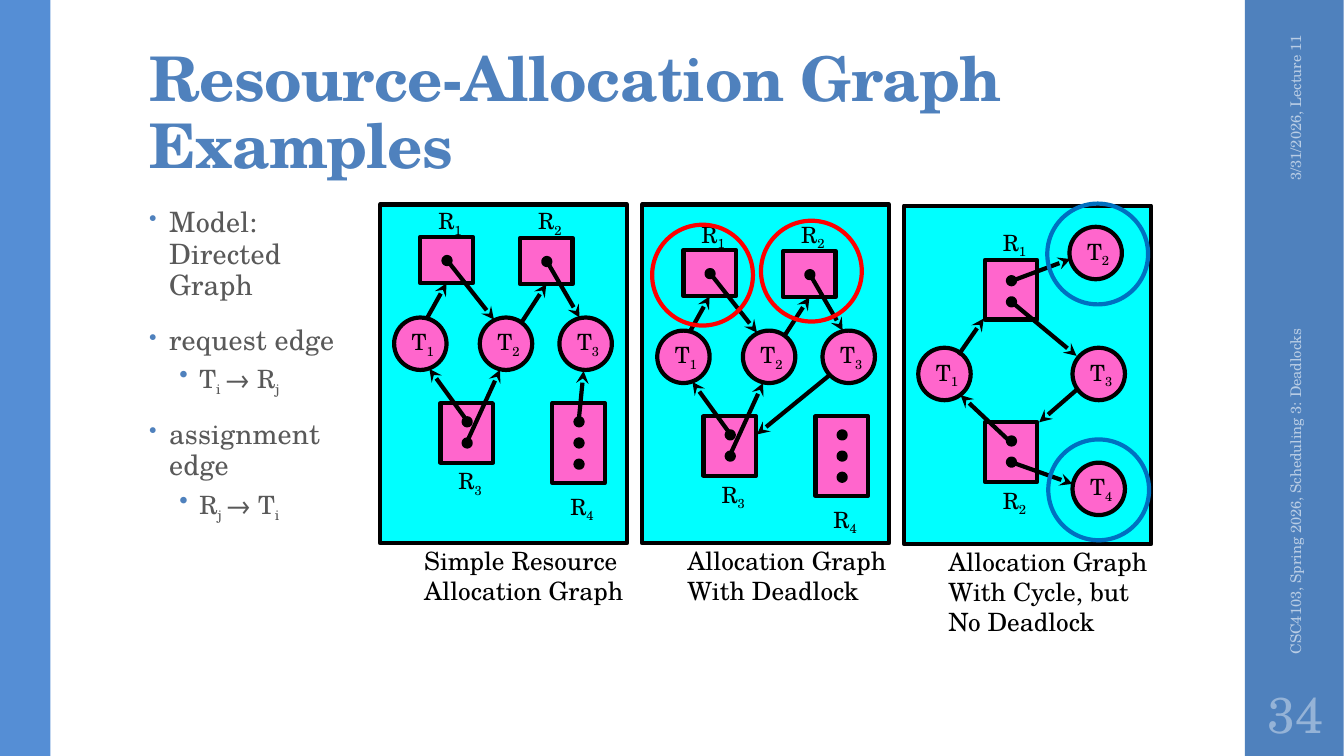
from dataclasses import dataclass
from typing import Any, Optional

from lxml.etree import SubElement
from pptx import Presentation
from pptx.dml.color import RGBColor
from pptx.enum.shapes import MSO_CONNECTOR, MSO_SHAPE
from pptx.enum.text import MSO_ANCHOR, MSO_AUTO_SIZE, PP_ALIGN
from pptx.oxml.ns import qn
from pptx.util import Emu, Pt

PX = 9144  # one px is a hundredth of an inch
FONT = "TeX Gyre Schola"
COLORS = {
    "blue": "4F81BD", "strip": "558ED5", "gray": "595959", "pale": "B9CDE5",
    "number": "95B3D7", "cyan": "00FFFF", "pink": "FF66CC", "black": "000000",
    "red": "FF0000", "ring": "0070C0",
}
Box = tuple[int, int, int, int]
Point = tuple[int, int]


@dataclass(frozen=True)
class Resource:
    number: int
    at: Point
    height: int
    dots: int
    dot_top: int
    label_top: int


@dataclass(frozen=True)
class Edge:
    begin: Point
    end: Point
    joined: Optional[int] = None  # resource whose bottom middle it meets


@dataclass(frozen=True)
class Panel:
    frame: Point
    graph: Point
    threads: tuple[Point, ...]
    resources: tuple[Resource, ...]
    edges: tuple[Edge, ...]
    caption: str
    caption_box: Box


@dataclass(frozen=True)
class Label:
    box: Box
    text: str
    size: float
    color: str
    align: PP_ALIGN = PP_ALIGN.LEFT
    rotation: int = 0
    margin: int = 10


@dataclass(frozen=True)
class Bullet:
    spans: tuple[str, ...]  # every second span is a subscript
    level: int = 0


THREADS = ((14, 112), (99, 112), (178, 112))
RESOURCES = (
    Resource(1, (40, 32), 46, 1, 20, -34), Resource(2, (139, 33), 46, 1, 20, -35),
    Resource(3, (60, 197), 59, 2, 15, 59), Resource(4, (171, 197), 79, 3, 15, 84),
)
EDGES = (
    Edge((47, 112), (67, 79), 1), Edge((68, 57), (113, 114)),
    Edge((141, 116), (162, 81), 2), Edge((166, 57), (198, 112)),
    Edge((86, 214), (49, 163)), Edge((86, 236), (119, 164)),
)
PANELS = (
    Panel((377, 203), (377, 203), THREADS, RESOURCES,
          EDGES + (Edge((197, 216), (202, 165)),),
          "Simple Resource\nAllocation Graph", (411, 536, 220, 71)),
    Panel((637, 203), (638, 216), THREADS, RESOURCES,
          EDGES + (Edge((184, 157), (113, 215)),),
          "Allocation Graph\vWith Deadlock", (672, 536, 220, 71)),
    Panel((897, 204), (897, 204),
          ((14, 141), (164, 21), (167, 141), (167, 255)),
          (Resource(2, (80, 215), 59, 2, 15, 59), Resource(1, (80, 54), 59, 2, 17, -36)),
          (Edge((54, 148), (79, 112)), Edge((105, 234), (56, 188)),
           Edge((105, 254), (167, 276)), Edge((172, 182), (134, 215)),
           Edge((106, 95), (171, 149)), Edge((106, 75), (165, 53))),
          "Allocation Graph\vWith Cycle, but\nNo Deadlock", (931, 537, 220, 101)),
)
RINGS = ((755, 219, "red"), (647, 223, "red"), (1039, 202, "ring"), (1040, 436, "ring"))
MARGIN_LABELS = (
    Label((1181, 109, 208, 40), "3/31/2026, Lecture 11", 10.5, "pale", PP_ALIGN.RIGHT, 270),
    Label((1089, 443, 392, 40), "CSC4103, Spring 2026, Scheduling 3: Deadlocks",
          10.5, "pale", rotation=270),
    Label((1235, 675, 100, 65), "34", 36, "number", PP_ALIGN.CENTER, margin=5),
)
BULLETS = (
    Bullet(("Model: Directed Graph",)),
    Bullet(("request edge",)), Bullet(("T", "i ", "→ R", "j"), 1),
    Bullet(("assignment edge",)), Bullet(("R", "j ", "→ T", "i"), 1),
)


def rgb(name: str) -> RGBColor:
    return RGBColor.from_string(COLORS[name])


def emu(*lengths: int) -> list[Emu]:
    return [Emu(length * PX) for length in lengths]


def set_font(para: Any, size: float, color: str) -> None:
    para.font.name, para.font.size = FONT, Pt(size)
    para.font.color.rgb = rgb(color)


def add_spans(para: Any, spans: tuple[str, ...]) -> None:
    for index, text in enumerate(spans):
        span = para.add_run()
        span.text = text
        if index % 2:
            span.font._element.set("baseline", "-25000")


def add_preset(shapes: Any, kind: MSO_SHAPE, box: Box, fill: Optional[str],
               line: Optional[str] = "black") -> Any:
    shape = shapes.add_shape(kind, *emu(*box))
    shape.shadow.inherit = False
    if fill:
        shape.fill.solid()
        shape.fill.fore_color.rgb = rgb(fill)
    else:
        shape.fill.background()
    if line:
        shape.line.color.rgb, shape.line.width = rgb(line), Pt(3)
    else:
        shape.line.fill.background()
    return shape


def write_node(shape: Any, letter: str, number: int) -> None:
    frame = shape.text_frame
    frame.word_wrap = False
    para = frame.paragraphs[0]
    para.alignment = PP_ALIGN.LEFT
    add_spans(para, (letter, str(number)))
    set_font(para, 16, "black")


def add_resource(shapes: Any, resource: Resource, origin: Point) -> Any:
    left, top = origin[0] + resource.at[0], origin[1] + resource.at[1]
    square = add_preset(shapes, MSO_SHAPE.RECTANGLE, (left, top, 52, resource.height), "pink")
    for row in range(resource.dots):
        dot_top = top + resource.dot_top + 21 * row
        add_preset(shapes, MSO_SHAPE.OVAL, (left + 23, dot_top, 7, 7), "black")
    label = shapes.add_textbox(*emu(left + 8, top + resource.label_top, 45, 37))
    write_node(label, "R", resource.number)
    return square


def add_edge(shapes: Any, edge: Edge, origin: Point, squares: dict[int, Any]) -> None:
    x, y = origin
    arrow = shapes.add_connector(MSO_CONNECTOR.STRAIGHT, *emu(
        x + edge.begin[0], y + edge.begin[1], x + edge.end[0], y + edge.end[1]))
    arrow.line.color.rgb, arrow.line.width = rgb("black"), Pt(3)
    properties = arrow._element.spPr
    SubElement(properties.find(qn("a:ln")), qn("a:tailEnd"), type="stealth")
    SubElement(properties, qn("a:effectLst"))
    if edge.joined:
        arrow.end_connect(squares[edge.joined], 2)


def add_panel(page: Any, panel: Panel) -> None:
    shapes = page.shapes.add_group_shape().shapes
    add_preset(shapes, MSO_SHAPE.RECTANGLE, (*panel.frame, 245, 336), "cyan")
    x, y = panel.graph
    for number, (left, top) in enumerate(panel.threads, 1):
        circle = add_preset(shapes, MSO_SHAPE.OVAL, (x + left, y + top, 52, 52), "pink")
        circle.text_frame.vertical_anchor = MSO_ANCHOR.MIDDLE
        write_node(circle, "T", number)
    squares = {item.number: add_resource(shapes, item, panel.graph) for item in panel.resources}
    for edge in panel.edges:
        add_edge(shapes, edge, panel.graph, squares)
    frame = page.shapes.add_textbox(*emu(*panel.caption_box)).text_frame
    frame.word_wrap = False
    frame.text = panel.caption
    for para in frame.paragraphs:
        set_font(para, 18, "black")


def add_label(page: Any, label: Label) -> None:
    box = page.shapes.add_textbox(*emu(*label.box))
    box.rotation = label.rotation
    frame = box.text_frame
    frame.word_wrap, frame.vertical_anchor = True, MSO_ANCHOR.MIDDLE
    frame.margin_left, frame.margin_right = emu(label.margin, label.margin)
    frame.text = label.text
    frame.paragraphs[0].alignment = label.align
    set_font(frame.paragraphs[0], label.size, label.color)


def add_title(page: Any) -> None:
    title = page.shapes.title
    title.left, title.top, title.width, title.height = emu(138, 32, 1060, 153)
    frame = title.text_frame
    frame.text = "Resource-Allocation Graph Examples"
    frame.word_wrap, frame.auto_size = True, MSO_AUTO_SIZE.NONE
    frame.vertical_anchor = MSO_ANCHOR.BOTTOM
    frame.margin_left, frame.margin_top, frame.margin_right, frame.margin_bottom = emu(10, 3, 10, 5)
    para = frame.paragraphs[0]
    para.alignment, para.line_spacing = PP_ALIGN.LEFT, 0.9
    set_font(para, 44, "blue")
    para.font.bold = True
    para.runs[0].font._element.set("spc", "-50")


def add_bullets(page: Any) -> None:
    frame = page.shapes.add_textbox(*emu(138, 200, 229, 476)).text_frame
    frame.word_wrap = True
    for index, bullet in enumerate(BULLETS):
        para = frame.add_paragraph() if index else frame.paragraphs[0]
        nested = bullet.level > 0
        para.level, para.line_spacing = bullet.level, 0.9 if nested else 0.95
        if index:
            para.space_before = Pt(3 if nested else 14)
        para.space_after = Pt(3 if nested else 2)
        properties = para._element.get_or_add_pPr()
        properties.set("marL", str((50 if nested else 20) * PX))
        properties.set("indent", str(-20 * PX))
        color = SubElement(properties, qn("a:buClr"))
        SubElement(color, qn("a:srgbClr"), val=COLORS["blue"])
        SubElement(properties, qn("a:buSzPct"), val="100000" if nested else "80000")
        SubElement(properties, qn("a:buChar"), char="•")
        add_spans(para, bullet.spans)
        set_font(para, 18 if nested else 20, "gray")
        if not nested:
            para.runs[0].font._element.set("spc", "10")


def main() -> None:
    deck = Presentation()
    deck.slide_width, deck.slide_height = Emu(12192000), Emu(750 * PX)
    page = deck.slides.add_slide(deck.slide_layouts[5])
    # Side bands, title and list
    add_preset(page.shapes, MSO_SHAPE.RECTANGLE, (1235, 0, 98, 750), "blue", None)
    add_preset(page.shapes, MSO_SHAPE.RECTANGLE, (0, 0, 50, 750), "strip", None)
    add_title(page)
    add_bullets(page)
    for label in MARGIN_LABELS:
        add_label(page, label)
    # Graphs and highlight rings
    for panel in PANELS:
        add_panel(page, panel)
    for left, top, color in RINGS:
        add_preset(page.shapes, MSO_SHAPE.OVAL, (left, top, 100, 100), None, color)
    deck.save("out.pptx")


if __name__ == "__main__":
    main()
